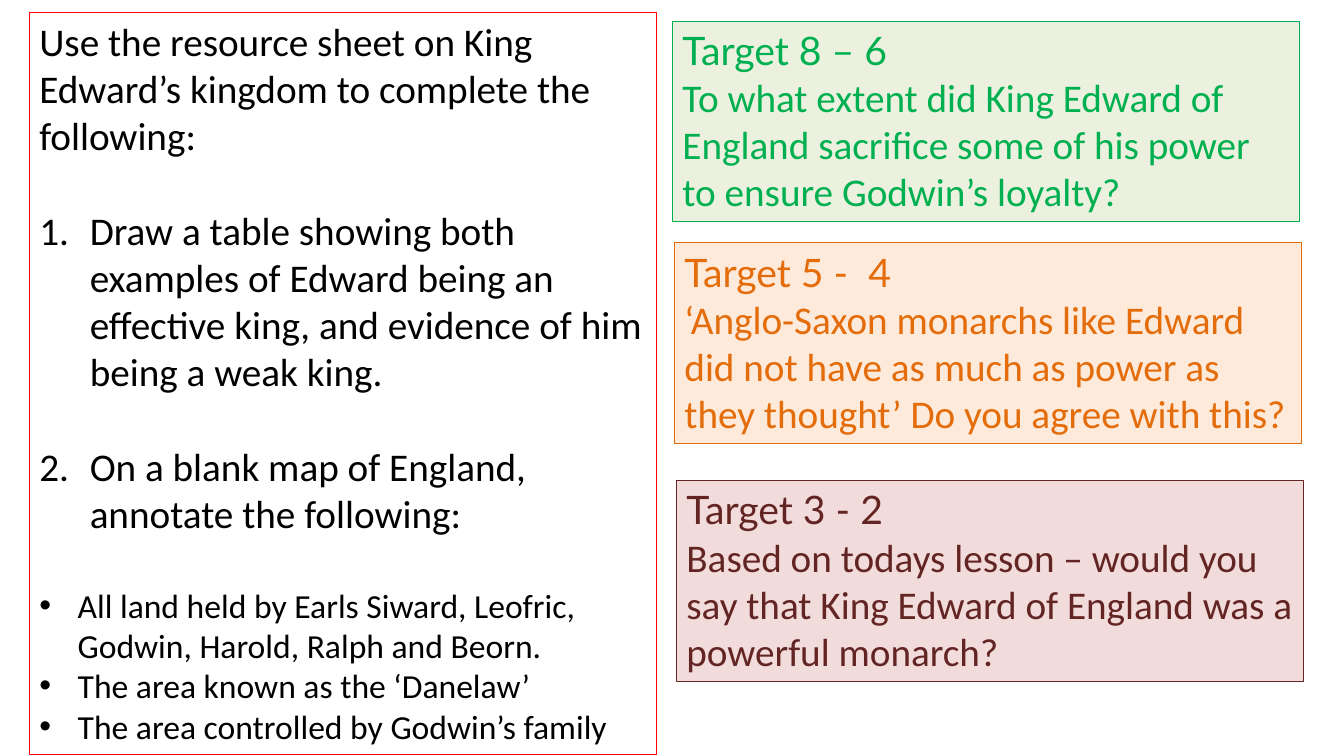
"""Build a lesson task slide: a task list beside three target questions."""
from lxml import etree
from pptx import Presentation
from pptx.dml.color import RGBColor
from pptx.enum import text
from pptx.oxml.ns import qn
from pptx.util import Inches, Pt

COLOURS = {
    "black": "000000", "red": "FF0000",
    "green": "00B050", "pale green": "EBF1DE",
    "orange": "E46C0A", "pale orange": "FDEADA",
    "maroon": "632523", "pale maroon": "F2DCDB",
}

TASKS = [
    ("plain", "Use the resource sheet on King Edward’s kingdom to complete the following:"),
    ("number", "Draw a table showing both examples of Edward being an effective king, "
               "and evidence of him being a weak king."),
    ("number", "On a blank map of England, annotate the following:"),
    ("bullet", "All land held by Earls Siward, Leofric, Godwin, Harold, Ralph and Beorn."),
    ("bullet", "The area known as the ‘Danelaw’"),
    ("bullet", "The area controlled by Godwin’s family"),
]

TARGETS = [
    (6.67, 0.21, "green", "Target 8 – 6",
     "To what extent did King Edward of England sacrifice some of his power "
     "to ensure Godwin’s loyalty?"),
    (6.69, 2.41, "orange", "Target 5 -  4",
     "‘Anglo-Saxon monarchs like Edward did not have as much as power as they thought’ "
     "Do you agree with this?"),
    (6.71, 4.77, "maroon", "Target 3 - 2",
     "Based on todays lesson – would you say that King Edward of England was a "
     "powerful monarch?"),
]

LIST_STYLES = {
    "plain": {"size": 28, "indent": 0, "marker": "buNone", "values": {}},
    "number": {"size": 28, "indent": 0.5, "marker": "buAutoNum", "values": {"type": "arabicPeriod"}},
    "bullet": {"size": 24, "indent": 0.38, "marker": "buChar", "values": {"char": "•"}},
}
BOX_WIDTH, TASK_HEIGHT, TARGET_HEIGHT = 6.22, 7.37, 1.99
SECTION_GAP = 34.2
FRAME_FORMAT = {
    "word_wrap": True,
    "auto_size": text.MSO_AUTO_SIZE.NONE,
    "vertical_anchor": text.MSO_ANCHOR.TOP,
}


def colour(name):
    return RGBColor.from_string(COLOURS[name])


def format_box(shape, line_colour):
    shape.line.color.rgb = colour(line_colour)
    shape.line.width = Pt(0.75)
    for name, value in FRAME_FORMAT.items():
        setattr(shape.text_frame, name, value)


def write_paragraph(frame, index, wording, size, font, font_colour, gap=0):
    paragraph = frame.paragraphs[0] if index == 0 else frame.add_paragraph()
    paragraph.space_before = Pt(gap)
    run = paragraph.add_run()
    run.text = wording
    for name, value in {"size": Pt(size), "name": font}.items():
        setattr(run.font, name, value)
    run.font.color.rgb = colour(font_colour)
    return paragraph


def mark_paragraph(paragraph, style):
    properties = paragraph._p.get_or_add_pPr()
    indent = Inches(style["indent"])
    properties.set("marL", str(indent))
    properties.set("indent", str(-indent))
    if style["marker"] != "buNone":
        typeface = "Arial" if style["marker"] == "buChar" else "+mj-lt"
        etree.SubElement(properties, qn("a:buFont"), typeface=typeface)
    etree.SubElement(properties, qn("a:" + style["marker"]), **style["values"])


def add_tasks(slide):
    box = slide.placeholders[1]
    box.left, box.top = Inches(0.29), Inches(0.12)
    box.width, box.height = Inches(BOX_WIDTH), Inches(TASK_HEIGHT)
    format_box(box, "red")
    previous = None
    for index, (kind, wording) in enumerate(TASKS):
        style = LIST_STYLES[kind]
        starts_section = index > 0 and (kind == "number" or kind != previous)
        gap = SECTION_GAP if starts_section else 0
        paragraph = write_paragraph(
            box.text_frame, index, wording, style["size"], "Calibri", "black", gap)
        mark_paragraph(paragraph, style)
        previous = kind


def add_target(slide, left, top, hue, heading, question):
    box = slide.shapes.add_textbox(
        Inches(left), Inches(top), Inches(BOX_WIDTH), Inches(TARGET_HEIGHT))
    format_box(box, hue)
    box.fill.solid()
    box.fill.fore_color.rgb = colour("pale " + hue)
    for index, (wording, font) in enumerate([(heading, "Lato"), (question, "Calibri")]):
        write_paragraph(box.text_frame, index, wording, 28, font, hue)


def main():
    presentation = Presentation()
    presentation.slide_width, presentation.slide_height = Inches(13.33), Inches(7.5)
    slide = presentation.slides.add_slide(presentation.slide_layouts[1])
    title = slide.shapes.title.element
    title.getparent().remove(title)
    add_tasks(slide)
    for target in TARGETS:
        add_target(slide, *target)
    presentation.save("out.pptx")


if __name__ == "__main__":
    main()
